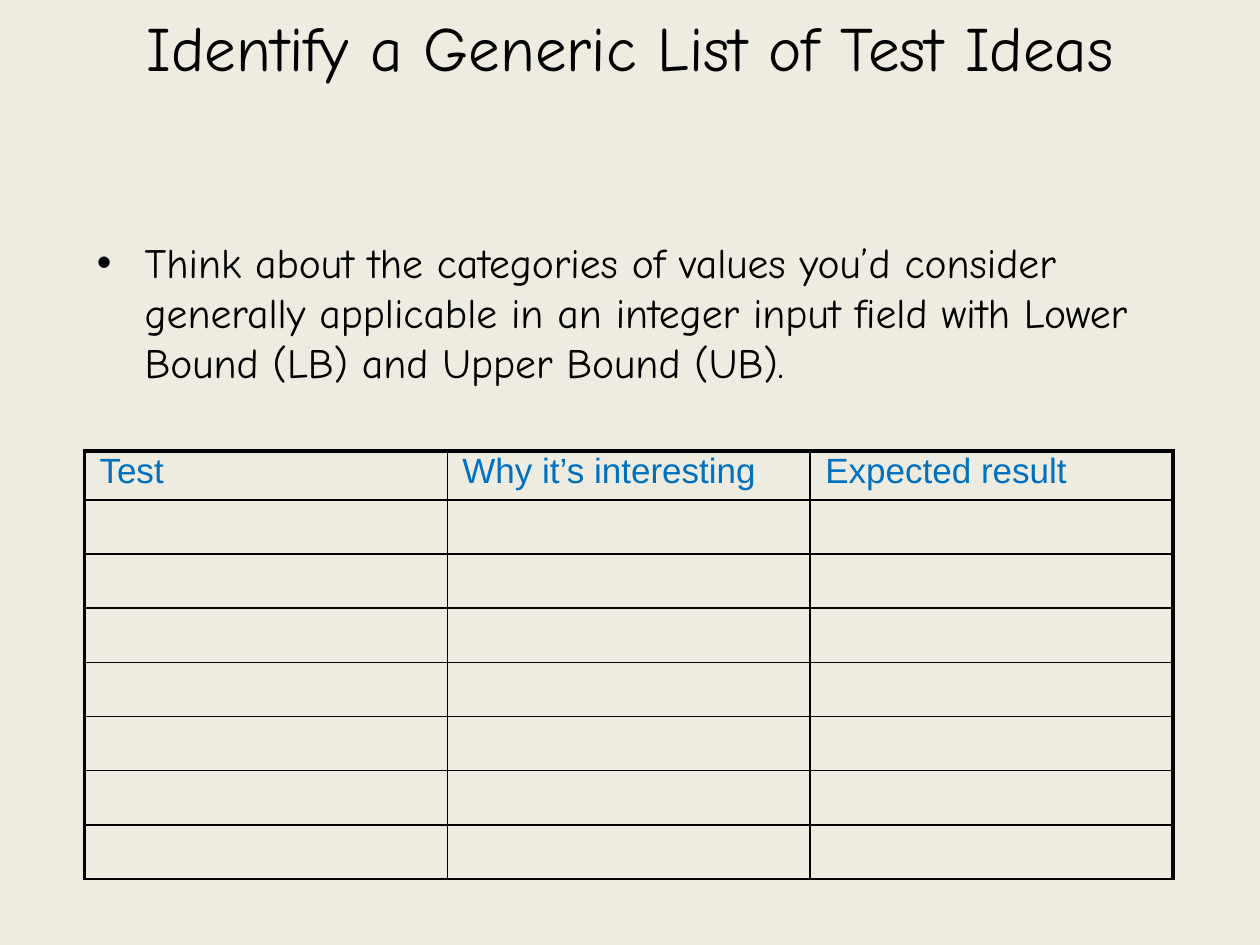
from lxml import etree
from pptx import Presentation
from pptx.dml.color import RGBColor
from pptx.enum.text import MSO_ANCHOR, MSO_AUTO_SIZE, PP_ALIGN
from pptx.oxml.ns import qn
from pptx.util import Inches, Pt

MID, TOP = MSO_ANCHOR.MIDDLE, MSO_ANCHOR.TOP
LEFT, CENTER = PP_ALIGN.LEFT, PP_ALIGN.CENTER
FIXED = MSO_AUTO_SIZE.NONE
COLORS = {"paper": "EEECE1", "ink": "000000", "head": "0070C0"}
HEADS = ["Test", "Why it’s interesting", "Expected result"]
ROWS = 8
COL_W, HEAD_H, ROW_H = 2.88, 0.37, 0.43
THIN, THICK = 1, 2.25


def paint(fill, name):
    fill.solid()
    fill.fore_color.rgb = RGBColor.from_string(COLORS[name])


def write(frame, text, size, font="Comic Neue", color="ink", align=LEFT, anchor=TOP):
    frame.word_wrap = True
    frame.vertical_anchor = anchor
    para = frame.paragraphs[0]
    para.alignment = align
    run = para.add_run()
    run.text = text
    run.font.size, run.font.name = Pt(size), font
    run.font.color.rgb = RGBColor.from_string(COLORS[color])
    return para


def place(shape, left, top, width, height):
    shape.left, shape.top = Inches(left), Inches(top)
    shape.width, shape.height = Inches(width), Inches(height)


def add_title(slide, text):
    title = slide.shapes.title
    place(title, 0.08, 0.08, 9.84, 0.58)
    title.text_frame.auto_size = FIXED
    write(title.text_frame, text, 36, align=CENTER, anchor=MID)


def add_bullet(slide, text):
    box = slide.shapes.add_textbox(*map(Inches, (0.67, 1.83, 8.69, 1.43)))
    props = write(box.text_frame, text, 23.8)._p.get_or_add_pPr()
    props.set("marL", str(Inches(0.38)))
    props.set("indent", str(-Inches(0.38)))
    etree.SubElement(props, qn("a:buFont"), typeface="Arial")
    etree.SubElement(props, qn("a:buChar"), char="•")


def edge(cell, **widths):
    """Draw cell borders; widths in points must come as L, R, T, B."""
    props = cell._tc.get_or_add_tcPr()
    for side, width in widths.items():
        line = etree.SubElement(props, qn(f"a:ln{side}"), w=str(Pt(width)))
        fill = etree.SubElement(line, qn("a:solidFill"))
        etree.SubElement(fill, qn("a:srgbClr"), val=COLORS["ink"])


def add_grid(slide, heads):
    cols = len(heads)
    size = (COL_W * cols, HEAD_H + ROW_H * (ROWS - 1))
    frame = slide.shapes.add_table(ROWS, cols, *map(Inches, (0.67, 3.58, *size)))
    table = frame.table
    table.horz_banding = table.first_row = False
    for col in table.columns:
        col.width = Inches(COL_W)
    for r, row in enumerate(table.rows):
        row.height = Inches(ROW_H if r else HEAD_H)
        for c, cell in enumerate(row.cells):
            edge(cell, L=THIN if c else THICK,
                 R=THICK if c == cols - 1 else THIN,
                 T=THIN if r else THICK, B=THIN)
            cell.fill.background()
            cell.margin_left = cell.margin_right = Inches(0.12)
            cell.margin_top = cell.margin_bottom = Inches(0.06)
    for cell, text in zip(table.rows[0].cells, heads):
        para = write(cell.text_frame, text, 20, font="Arial", color="head")
        para.line_spacing = 0.8


def main():
    deck = Presentation()
    deck.slide_width, deck.slide_height = Inches(10), Inches(7.5)
    slide = deck.slides.add_slide(deck.slide_layouts[5])
    paint(slide.background.fill, "paper")
    add_title(slide, "Identify a Generic List of Test Ideas")
    add_bullet(slide, "Think about the categories of values you’d consider "
               "generally applicable in an integer input field with Lower "
               "Bound (LB) and Upper Bound (UB).")
    add_grid(slide, HEADS)
    deck.save("out.pptx")


if __name__ == "__main__":
    main()
